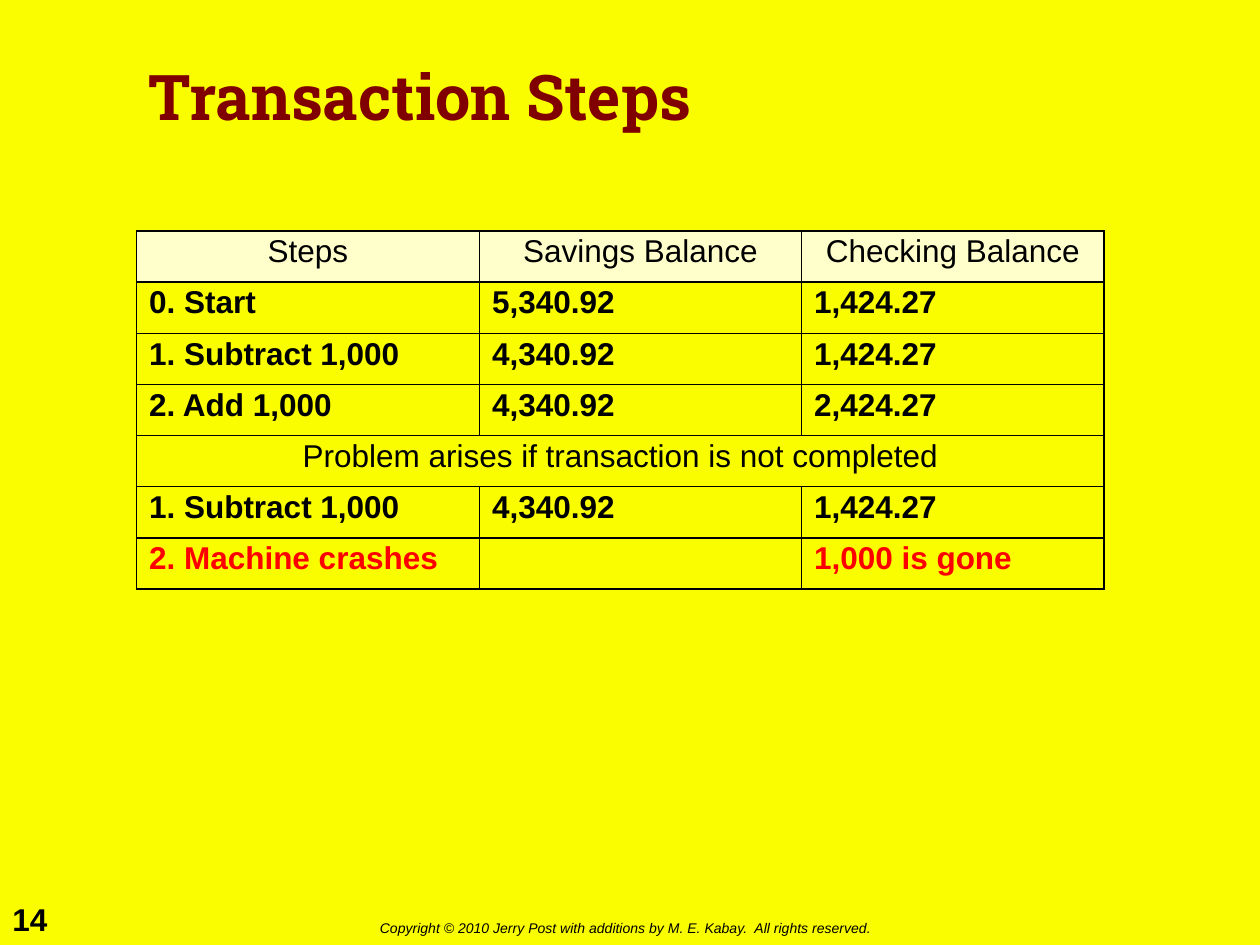
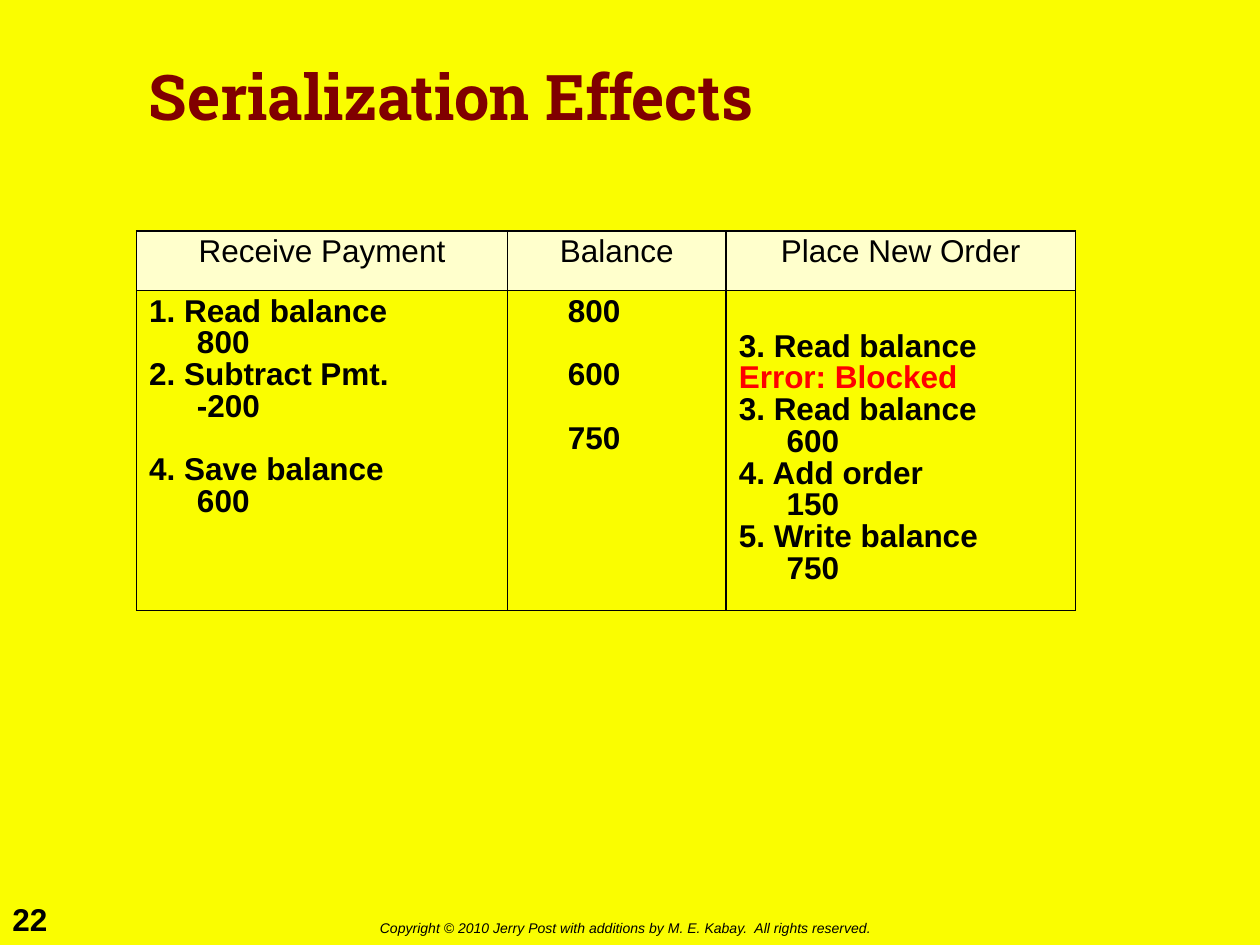
import dataclasses

import lxml.etree
import pptx
import pptx.dml.color
import pptx.enum.text
import pptx.oxml.ns
import pptx.util

Pt = pptx.util.Pt
Align = pptx.enum.text.PP_ALIGN
Anchor = pptx.enum.text.MSO_ANCHOR

YELLOW, CREAM, MAROON = "FAFD00", "FFFFCC", "800000"
BLACK, RED = "000000", "FF0000"
BODY_FONT, TITLE_FONT = "Arial", "Roboto Slab"
BODY_SIZE = 18
LINE_SPACING = 0.9
SKIPPED_LINE = 18.15
FIRST_SKIPPED_LINE = 20
CELL_MARGIN = 3.6
INDENT = 27.36
TABLE_LEFT, TABLE_TOP = 78, 132

COPYRIGHT = "Copyright © 2010 Jerry Post with additions by M. E. Kabay.  All rights reserved."


@dataclasses.dataclass
class Line:
    text: str
    color: str = BLACK
    skip_before: bool = False
    hanging: bool = True


def balance(text, skip_before=True):
    return Line(text, skip_before=skip_before, hanging=False)


# A body cell is a list of lines; \v breaks a line inside one paragraph.
# A row with a single cell spans the whole table.
SLIDES = [
    {
        "number": "14",
        "title": "Transaction Steps",
        "widths": [196, 184, 173],
        "heights": [29.25] * 7,
        "header": ["Steps", "Savings Balance", "Checking Balance"],
        "rows": [
            [[Line("0. Start")], [Line("5,340.92")], [Line("1,424.27")]],
            [[Line("1. Subtract 1,000")], [Line("4,340.92")], [Line("1,424.27")]],
            [[Line("2. Add 1,000")], [Line("4,340.92")], [Line("2,424.27")]],
            [[Line("Problem arises if transaction is not completed")]],
            [[Line("1. Subtract 1,000")], [Line("4,340.92")], [Line("1,424.27")]],
            [[Line("2. Machine crashes", RED)], [], [Line("1,000 is gone", RED)]],
        ],
    },
    {
        "number": "22",
        "title": "Serialization Effects",
        "widths": [212, 125, 199.5],
        "heights": [34, 139],
        "header": ["Receive Payment", "Balance", "Place New Order"],
        "rows": [
            [
                [
                    Line("1. Read balance\v800"),
                    Line("2. Subtract Pmt.\v-200"),
                    Line("4. Save balance\v600", skip_before=True),
                ],
                [balance("800", skip_before=False), balance("600"), balance("750")],
                [
                    Line("3. Read balance", skip_before=True),
                    Line("Error: Blocked", RED),
                    Line("3. Read balance\v600"),
                    Line("4. Add order\v150"),
                    Line("5. Write balance\v750"),
                ],
            ],
        ],
    },
]


def rgb(color):
    return pptx.dml.color.RGBColor.from_string(color)


def set_font(paragraph, size, color, name=BODY_FONT, bold=False, italic=False):
    font = paragraph.font
    font.name, font.size = name, Pt(size)
    font.bold, font.italic = bold, italic
    font.color.rgb = rgb(color)


def add_text(slide, text, left, top, width, height, size, color=BLACK, **style):
    shape = slide.shapes.add_textbox(Pt(left), Pt(top), Pt(width), Pt(height))
    shape.text_frame.word_wrap = True
    paragraph = shape.text_frame.paragraphs[0]
    paragraph.text = text
    set_font(paragraph, size, color, **style)
    return shape


def add_borders(cell):
    properties = cell._tc.get_or_add_tcPr()
    qn = pptx.oxml.ns.qn
    for position, side in enumerate(("lnL", "lnR", "lnT", "lnB")):
        line = lxml.etree.Element(qn(f"a:{side}"), w=str(Pt(1)))
        fill = lxml.etree.SubElement(line, qn("a:solidFill"))
        lxml.etree.SubElement(fill, qn("a:srgbClr"), val=BLACK)
        properties.insert(position, line)


def fill_cell(cell, lines, centered=False):
    """Write the lines; centred cells are regular, the others bold and indented."""
    if lines and lines[0].skip_before:
        cell.margin_top = Pt(CELL_MARGIN + FIRST_SKIPPED_LINE)
    for index, line in enumerate(lines):
        frame = cell.text_frame
        paragraph = frame.add_paragraph() if index else frame.paragraphs[0]
        paragraph.text = line.text
        paragraph.line_spacing = LINE_SPACING
        if centered:
            paragraph.alignment = Align.CENTER
        else:
            properties = paragraph._p.get_or_add_pPr()
            properties.set("marL", str(Pt(INDENT)))
            properties.set("indent", str(Pt(-INDENT if line.hanging else 0)))
        if index and line.skip_before:
            paragraph.space_before = Pt(SKIPPED_LINE)
        set_font(paragraph, BODY_SIZE, line.color, bold=not centered)


def add_table(slide, content):
    widths, heights = content["widths"], content["heights"]
    table = slide.shapes.add_table(
        len(heights), len(widths), Pt(TABLE_LEFT), Pt(TABLE_TOP),
        Pt(sum(widths)), Pt(sum(heights))).table
    table.first_row = table.horz_banding = False
    for column, width in zip(table.columns, widths):
        column.width = Pt(width)
    for row, height in zip(table.rows, heights):
        row.height = Pt(height)
    for row_index, row in enumerate(table.rows):
        for cell in row.cells:
            cell.fill.solid()
            cell.fill.fore_color.rgb = rgb(YELLOW if row_index else CREAM)
            add_borders(cell)

    for column_index, heading in enumerate(content["header"]):
        fill_cell(table.cell(0, column_index), [Line(heading)], centered=True)
    for row_index, cells in enumerate(content["rows"], start=1):
        spans_table = len(cells) == 1
        if spans_table:
            table.cell(row_index, 0).merge(table.cell(row_index, len(widths) - 1))
        for column_index, lines in enumerate(cells):
            fill_cell(table.cell(row_index, column_index), lines, spans_table)


def add_slide(presentation, content):
    slide = presentation.slides.add_slide(presentation.slide_layouts[6])
    slide.background.fill.solid()
    slide.background.fill.fore_color.rgb = rgb(YELLOW)
    add_text(slide, content["number"], 0, 511, 36, 29, 18, bold=True)
    add_text(slide, COPYRIGHT, 210, 522, 304, 17, 8, italic=True)
    title = add_text(slide, content["title"], 78, 12, 564, 90, 36, MAROON,
                     name=TITLE_FONT, bold=True)
    title.text_frame.vertical_anchor = Anchor.MIDDLE
    title.text_frame.paragraphs[0].line_spacing = LINE_SPACING
    add_table(slide, content)


def main():
    presentation = pptx.Presentation()
    presentation.slide_width, presentation.slide_height = Pt(720), Pt(540)
    for content in SLIDES:
        add_slide(presentation, content)
    presentation.save("out.pptx")


if __name__ == "__main__":
    main()
